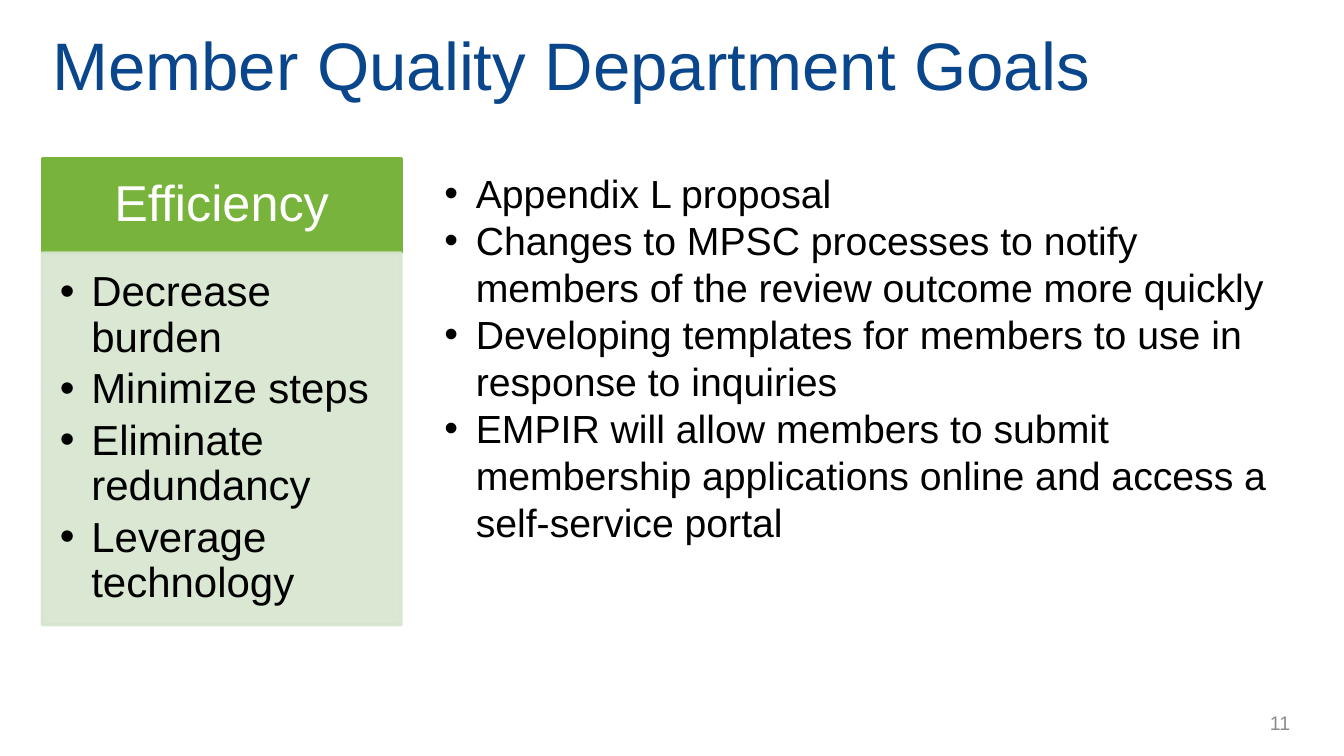
from dataclasses import dataclass

import lxml.etree
import pptx
import pptx.dml.color
import pptx.enum.shapes
import pptx.enum.text
import pptx.oxml.ns
import pptx.util

Pt = pptx.util.Pt
Align = pptx.enum.text.PP_ALIGN
Anchor = pptx.enum.text.MSO_ANCHOR
qn = pptx.oxml.ns.qn


@dataclass(frozen=True)
class Theme:
    font: str = "Arial"
    title_color: str = "0A468C"
    header_color: str = "78B43C"
    panel_color: str = "D6E5CE"
    header_text_color: str = "FFFFFF"
    text_color: str = "000000"
    number_color: str = "8C8C8C"
    title_size: int = 48
    header_size: int = 36
    goal_size: int = 30
    body_size: int = 28
    number_size: int = 14
    border: float = 2.25
    bullet_indent: float = 22.5


class SlideBuilder:
    def __init__(self, slide, theme):
        self.slide = slide
        self.theme = theme

    def color(self, value):
        return pptx.dml.color.RGBColor.from_string(value)

    def panel(self, box, color, opacity=100):
        shape = self.slide.shapes.add_shape(
            pptx.enum.shapes.MSO_SHAPE.RECTANGLE, *map(Pt, box))
        shape.shadow.inherit = False
        shape.line.width = Pt(self.theme.border)
        for fill in (shape.fill, shape.line.fill):
            fill.solid()
            fill.fore_color.rgb = self.color(color)
        if opacity < 100:
            for element in shape.element.spPr.iter(qn("a:srgbClr")):
                alpha = lxml.etree.SubElement(element, qn("a:alpha"))
                alpha.set("val", str(opacity * 1000))
        return shape

    def text_box(self, box):
        return self.slide.shapes.add_textbox(*map(Pt, box))

    def add_text(self, shape, lines, size, color, align=Align.LEFT, anchor=Anchor.TOP,
                 insets=(7.2, 3.6, 7.2, 3.6), bullets=False, line_spacing=1.0, space_after=0):
        frame = shape.text_frame
        frame.word_wrap = True
        frame.vertical_anchor = anchor
        (frame.margin_left, frame.margin_top,
         frame.margin_right, frame.margin_bottom) = map(Pt, insets)
        for index, line in enumerate(lines):
            paragraph = frame.add_paragraph() if index else frame.paragraphs[0]
            paragraph.alignment = align
            paragraph.line_spacing = line_spacing
            paragraph.space_after = Pt(space_after)
            if bullets:
                self.bullet(paragraph)
            run = paragraph.add_run()
            run.text = line
            run.font.name = self.theme.font
            run.font.size = Pt(size)
            run.font.color.rgb = self.color(color)

    def bullet(self, paragraph):
        properties = paragraph._p.get_or_add_pPr()
        indent = Pt(self.theme.bullet_indent)
        properties.set("marL", str(indent))
        properties.set("indent", str(-indent))
        font = lxml.etree.SubElement(properties, qn("a:buFont"))
        font.set("typeface", self.theme.font)
        character = lxml.etree.SubElement(properties, qn("a:buChar"))
        character.set("char", "•")


def main():
    presentation = pptx.Presentation()
    presentation.slide_width = Pt(960)
    presentation.slide_height = Pt(540)
    theme = Theme()
    builder = SlideBuilder(
        presentation.slides.add_slide(presentation.slide_layouts[6]), theme)

    left, top, width, header_height = 30.25, 113, 256.3, 67.7
    header = builder.panel((left, top, width, header_height), theme.header_color)
    builder.add_text(header, ["Efficiency"], theme.header_size, theme.header_text_color,
                     align=Align.CENTER, anchor=Anchor.MIDDLE,
                     insets=(20, 11.5, 20, 11.5), line_spacing=0.9)

    goals = builder.panel((left, top + header_height, width, 265.7), theme.panel_color, opacity=90)
    builder.add_text(
        goals,
        ["Decrease burden", "Minimize steps", "Eliminate redundancy", "Leverage technology"],
        theme.goal_size, theme.text_color, insets=(12.5, 12.5, 16.5, 18.75),
        bullets=True, line_spacing=0.9, space_after=4.5)

    title = builder.text_box((left, 12.25, 917.3, 67))
    builder.add_text(title, ["Member Quality Department Goals"], theme.title_size,
                     theme.title_color, anchor=Anchor.MIDDLE)

    number = builder.text_box((766, 501.85, 162.7, 28.75))
    builder.add_text(number, ["11"], theme.number_size, theme.number_color,
                     align=Align.RIGHT, anchor=Anchor.MIDDLE)

    actions = builder.text_box((310.3, 117.4, 617.75, 278.6))
    builder.add_text(
        actions,
        ["Appendix L proposal",
         "Changes to MPSC processes to notify members of the review outcome more quickly",
         "Developing templates for members to use in response to inquiries",
         "EMPIR will allow members to submit membership applications online "
         "and access a self-service portal"],
        theme.body_size, theme.text_color, bullets=True)

    presentation.save("out.pptx")


if __name__ == "__main__":
    main()
